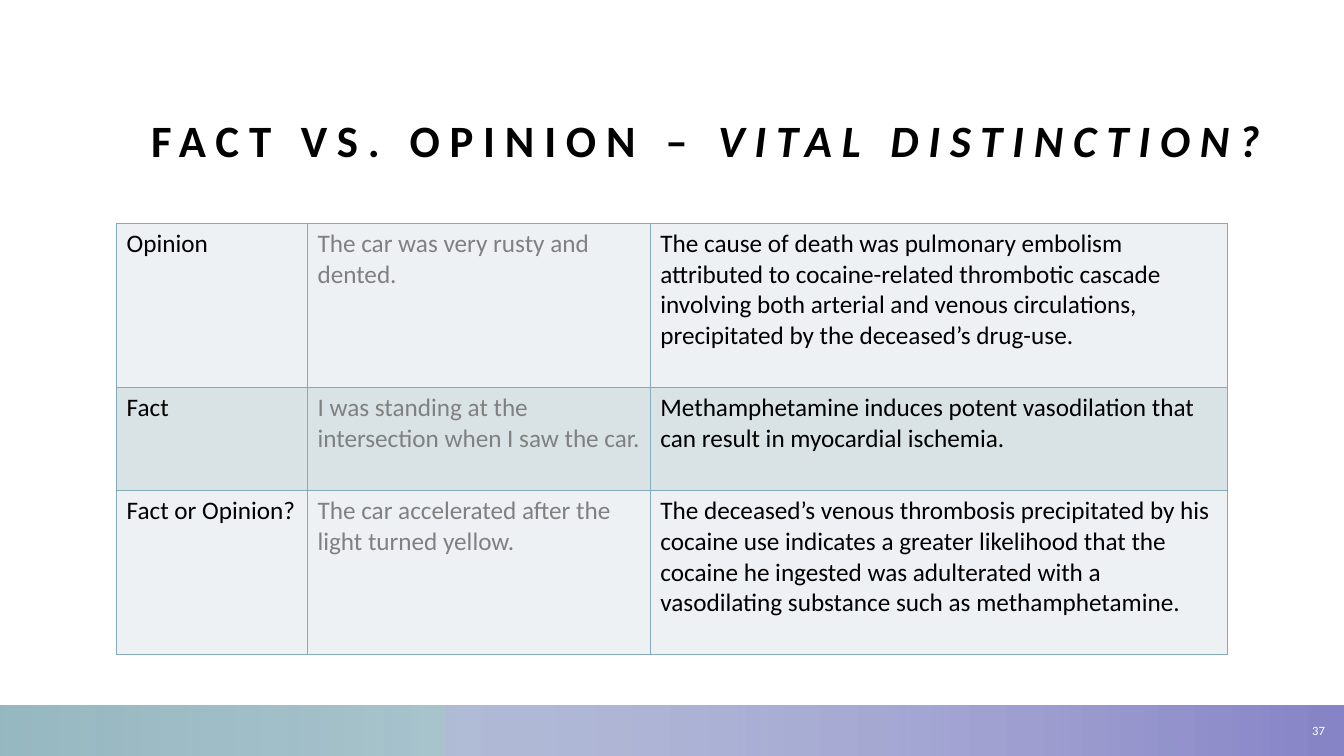
import lxml.etree
import pptx
import pptx.dml.color
import pptx.enum.shapes
import pptx.enum.text
import pptx.oxml.ns
import pptx.util
from pptx.util import Cm

RGBColor = pptx.dml.color.RGBColor
Anchor = pptx.enum.text.MSO_ANCHOR
Align = pptx.enum.text.PP_ALIGN
qn = pptx.oxml.ns.qn

BLACK = RGBColor(0x00, 0x00, 0x00)
WHITE = RGBColor(0xFF, 0xFF, 0xFF)
GREY = RGBColor(0x80, 0x80, 0x80)
TEAL = RGBColor(0x84, 0xAC, 0xB6)
BLUE = RGBColor(0x69, 0x97, 0xAF)
LILAC = RGBColor(0xB7, 0xB5, 0xDD)
VIOLET = RGBColor(0x87, 0x84, 0xC7)
ROW_FILLS = (RGBColor(0xED, 0xF1, 0xF3), RGBColor(0xD9, 0xE3, 0xE5))

FONT = "Calibri"
SLIDE_WIDTH, SLIDE_HEIGHT = Cm(33.87), Cm(19.05)
BAND_HEIGHT = Cm(1.27)

COLUMN_WIDTHS = (Cm(4.81), Cm(8.64), Cm(14.54))
COLUMN_COLORS = (BLACK, GREY, BLACK)
ROW_HEIGHTS = (Cm(4.14), Cm(2.59), Cm(4.14))
STATEMENTS = (
    ("Opinion",
     "The car was very rusty and dented.",
     "The cause of death was pulmonary embolism attributed to cocaine-related "
     "thrombotic cascade involving both arterial and venous circulations, "
     "precipitated by the deceased’s drug-use."),
    ("Fact",
     "I was standing at the intersection when I saw the car.",
     "Methamphetamine induces potent vasodilation that can result in "
     "myocardial ischemia."),
    ("Fact or Opinion?",
     "The car accelerated after the light turned yellow.",
     "The deceased’s venous thrombosis precipitated by his cocaine use "
     "indicates a greater likelihood that the cocaine he ingested was "
     "adulterated with a vasodilating substance such as methamphetamine."),
)


def write(paragraph, text, size=18, color=BLACK, bold=False, italic=False,
          spacing=0, align=Align.LEFT):
    """Append a formatted run; size and letter spacing are in points."""
    paragraph.alignment = align
    run = paragraph.add_run()
    run.text = text
    font = run.font
    font.name, font.size = FONT, pptx.util.Pt(size)
    font.bold, font.italic = bold, italic
    font.color.rgb = color
    if spacing:
        font._element.set("spc", str(spacing * 100))


def add_text_box(slide, left, top, width, height, anchor):
    frame = slide.shapes.add_textbox(left, top, width, height).text_frame
    frame.word_wrap = True
    frame.vertical_anchor = anchor
    frame.margin_left = frame.margin_right = 0
    frame.margin_top = frame.margin_bottom = 0
    return frame.paragraphs[0]


def add_gradient_band(slide, left, top, width, height, stops):
    """Each stop is a color and its opacity in percent, from left to right."""
    band = slide.shapes.add_shape(
        pptx.enum.shapes.MSO_SHAPE.RECTANGLE, left, top, width, height)
    band.shadow.inherit = False
    band.line.fill.background()
    band.fill.gradient()
    band.fill.gradient_angle = 0
    for stop, (color, opacity) in zip(band.fill.gradient_stops, stops):
        stop.color.rgb = color
    for element, (color, opacity) in zip(band._element.iter(qn("a:srgbClr")), stops):
        alpha = lxml.etree.SubElement(element, qn("a:alpha"))
        alpha.set("val", str(opacity * 1000))


def add_footer(slide, left, top, width, height):
    overlay_left = left + Cm(11.22)
    add_gradient_band(slide, left, top, width, height,
                      ((TEAL, 85), (BLUE, 28)))
    add_gradient_band(slide, overlay_left, top, left + width - overlay_left, height,
                      ((LILAC, 55), (VIOLET, 100)))
    number_width, right_margin = Cm(1), Cm(0.48)
    number = add_text_box(slide, left + width - right_margin - number_width, top,
                          number_width, height, Anchor.MIDDLE)
    write(number, "37", size=9, color=WHITE, align=Align.RIGHT)


def add_title(slide, left, top, width, height):
    title = add_text_box(slide, left, top, width, height, Anchor.BOTTOM)
    style = dict(size=32, bold=True, spacing=7)
    write(title, "FACT VS. OPINION – ", **style)
    write(title, "VITAL DISTINCTION?", italic=True, **style)


def add_cell_borders(cell, color):
    properties = cell._tc.get_or_add_tcPr()
    for side in ("a:lnL", "a:lnR", "a:lnT", "a:lnB"):
        line = lxml.etree.SubElement(properties, qn(side), w=str(pptx.util.Pt(1)))
        fill = lxml.etree.SubElement(line, qn("a:solidFill"))
        lxml.etree.SubElement(fill, qn("a:srgbClr"), val=str(color))


def add_statement_table(slide, left, top):
    table = slide.shapes.add_table(
        len(ROW_HEIGHTS), len(COLUMN_WIDTHS), left, top,
        sum(COLUMN_WIDTHS), sum(ROW_HEIGHTS)).table
    table.first_row = table.horz_banding = False
    for column, width in zip(table.columns, COLUMN_WIDTHS):
        column.width = width
    for index, (row, height) in enumerate(zip(table.rows, ROW_HEIGHTS)):
        row.height = height
        for cell, text, color in zip(row.cells, STATEMENTS[index], COLUMN_COLORS):
            add_cell_borders(cell, TEAL)
            cell.fill.solid()
            cell.fill.fore_color.rgb = ROW_FILLS[index % 2]
            write(cell.text_frame.paragraphs[0], text, color=color)


def main():
    presentation = pptx.Presentation()
    presentation.slide_width = SLIDE_WIDTH
    presentation.slide_height = SLIDE_HEIGHT
    slide = presentation.slides.add_slide(presentation.slide_layouts[6])
    add_footer(slide, 0, SLIDE_HEIGHT - BAND_HEIGHT, SLIDE_WIDTH, BAND_HEIGHT)
    add_title(slide, Cm(3.81), Cm(2.2), Cm(28.45), Cm(2))
    add_statement_table(slide, Cm(2.94), Cm(5.63))
    presentation.save("out.pptx")


if __name__ == "__main__":
    main()
